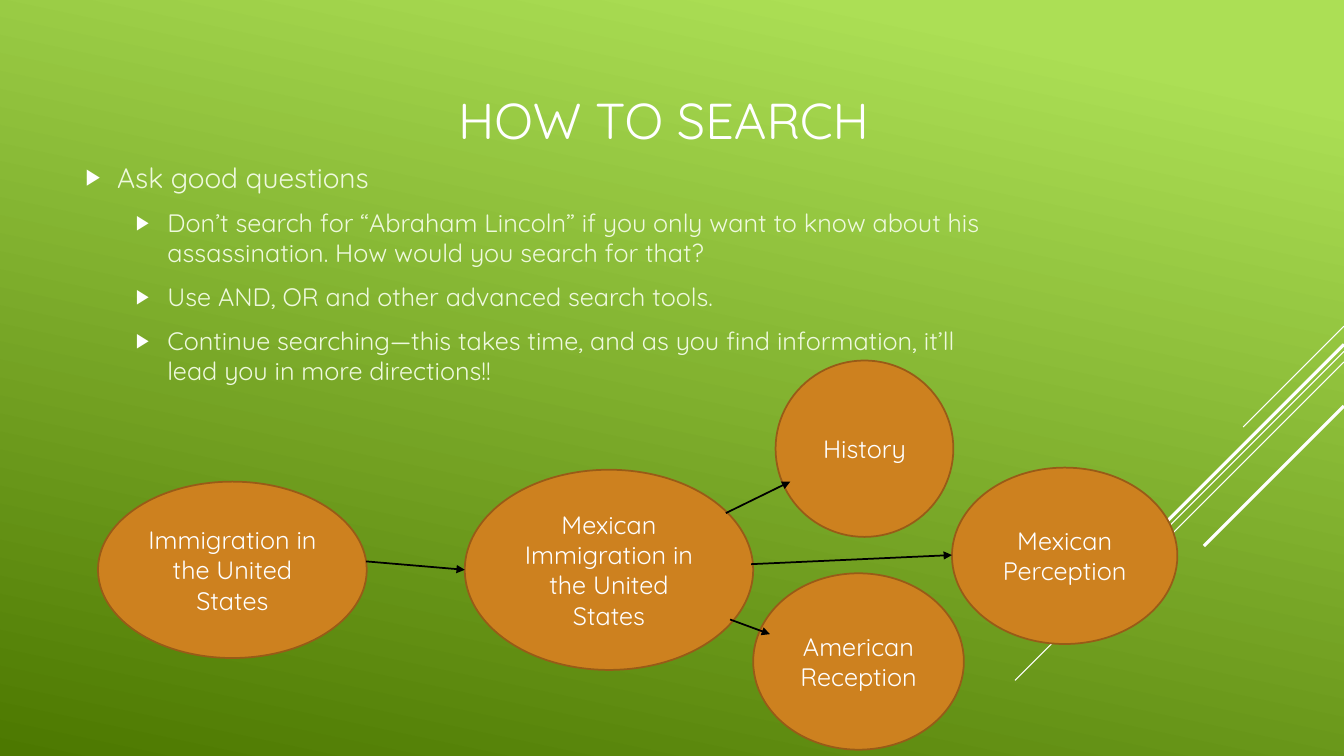
from collections import namedtuple
from dataclasses import dataclass

from lxml import etree
from pptx import Presentation
from pptx.dml.color import RGBColor
from pptx.enum import shapes, text
from pptx.oxml import ns
from pptx.util import Pt

Box = namedtuple("Box", "left top width height")


@dataclass(frozen=True)
class Theme:
    font: str = "Quicksand"
    white: str = "FFFFFF"
    black: str = "000000"
    advice: str = "EEF9DD"
    light_green: str = "ACDF55"
    dark_green: str = "4C7800"
    topic: str = "CD811F"
    topic_edge: str = "985B17"
    title_size: float = 36
    lead_size: float = 20
    detail_size: float = 18
    thin: float = 0.75
    medium: float = 1.25
    thick: float = 2.25


THEME = Theme()

STREAKS = [
    (0, 72, THEME.thin),
    (18, 235, THEME.thin),
    (25.5, 149.5, THEME.thin),
    (13, 137.5, THEME.thick),
    (57, 100, THEME.thick),
]

ADVICE = [
    (0, "Ask good questions"),
    (1, "Don’t search for “Abraham Lincoln” if you only want to know about "
        "his assassination. How would you search for that?"),
    (1, "Use AND, OR and other advanced search tools."),
    (1, "Continue searching—this takes time, and as you find information, "
        "it’ll lead you in more directions!!"),
]

TOPICS = [
    ("Immigration in the United States", Box(0, 86.5, 192, 126)),
    ("History", Box(484, 0, 127, 126)),
    ("Mexican Perception", Box(610, 76.5, 161, 126)),
    ("Mexican Immigration in the United States", Box(262, 78, 206, 143)),
    ("American Reception", Box(468, 152, 150.5, 126)),
]

PATHS = [
    ((191.5, 143.5), (262, 149.5)),
    ((448.5, 109), (494.5, 86.5)),
    ((466.5, 145.5), (610, 139)),
    ((451.5, 185), (480, 195.5)),
]


def rgb(colour):
    return RGBColor.from_string(colour)


def points(box):
    return [Pt(length) for length in box]


def add_words(paragraph, words, size, colour):
    run = paragraph.add_run()
    run.text = words
    run.font.name = THEME.font
    run.font.size = Pt(size)
    run.font.color.rgb = rgb(colour)


def add_line(slide, start, end, colour, weight):
    line = slide.shapes.add_connector(
        shapes.MSO_CONNECTOR.STRAIGHT, *points(start + end))
    line.line.color.rgb = rgb(colour)
    line.line.width = Pt(weight)
    etree.SubElement(line._element.spPr, ns.qn("a:effectLst"))
    return line


def paint_background(slide):
    fill = slide.background.fill
    fill.gradient()
    fill.gradient_angle = 258
    stops = [(0.1, THEME.light_green), (1, THEME.dark_green)]
    for stop, (position, colour) in zip(fill.gradient_stops, stops):
        stop.position = position
        stop.color.rgb = rgb(colour)


def draw_streaks(slide, box):
    right = box.left + box.width
    for offset, reach, weight in STREAKS:
        top = box.top + offset
        add_line(slide, (right, top), (right - reach, top + reach),
                 THEME.white, weight)


def place_title(slide, box):
    title = slide.shapes.title
    title.left, title.top, title.width, title.height = points(box)
    frame = title.text_frame
    frame.vertical_anchor = text.MSO_ANCHOR.MIDDLE
    heading = frame.paragraphs[0]
    heading.alignment = text.PP_ALIGN.CENTER
    add_words(heading, "HOW TO SEARCH", THEME.title_size, THEME.white)


def add_bullet(paragraph, level):
    properties = paragraph._p.get_or_add_pPr()
    properties.set("marL", str(Pt(22.5 + 36 * level)))
    properties.set("indent", str(Pt(-22.5)))
    colour = etree.SubElement(properties, ns.qn("a:buClr"))
    etree.SubElement(colour, ns.qn("a:srgbClr"), val=THEME.white)
    etree.SubElement(properties, ns.qn("a:buSzPct"), val="80000")
    etree.SubElement(properties, ns.qn("a:buFont"), typeface="Arial")
    etree.SubElement(properties, ns.qn("a:buChar"), char="▶")


def write_advice(slide, box):
    frame = slide.shapes.add_textbox(*points(box)).text_frame
    frame.word_wrap = True
    for index, (level, words) in enumerate(ADVICE):
        advice = frame.add_paragraph() if index else frame.paragraphs[0]
        size = THEME.detail_size if level else THEME.lead_size
        advice.level = level
        advice.space_before = Pt(0.2 * size if index else 0)
        advice.space_after = Pt(6)
        add_bullet(advice, level)
        add_words(advice, words, size, THEME.advice)


def draw_topic(slide, box, words):
    topic = slide.shapes.add_shape(shapes.MSO_SHAPE.OVAL, *points(box))
    topic.shadow.inherit = False
    topic.fill.solid()
    topic.fill.fore_color.rgb = rgb(THEME.topic)
    topic.line.color.rgb = rgb(THEME.topic_edge)
    topic.line.width = Pt(THEME.medium)
    frame = topic.text_frame
    frame.word_wrap = True
    frame.vertical_anchor = text.MSO_ANCHOR.MIDDLE
    label = frame.paragraphs[0]
    label.alignment = text.PP_ALIGN.CENTER
    add_words(label, words, THEME.detail_size, THEME.white)


def draw_topic_map(slide, box):
    def shift(point):
        return box.left + point[0], box.top + point[1]

    for words, place in TOPICS:
        left, top = shift(place)
        draw_topic(slide, Box(left, top, place.width, place.height), words)
    for start, end in PATHS:
        arrow = add_line(slide, shift(start), shift(end),
                         THEME.black, THEME.medium)
        etree.SubElement(arrow.line._get_or_add_ln(), ns.qn("a:tailEnd"),
                         type="triangle")


def build_search_slide(deck):
    slide = deck.slides.add_slide(deck.slide_layouts.get_by_name("Title Only"))
    paint_background(slide)
    draw_streaks(slide, Box(725, 233, 235, 253))
    place_title(slide, Box(107, 26, 734, 119))
    write_advice(slide, Box(54, 111, 672, 168))
    draw_topic_map(slide, Box(70, 257.5, 771, 278))


def main():
    deck = Presentation()
    deck.slide_width, deck.slide_height = Pt(960), Pt(540)
    build_search_slide(deck)
    deck.save("out.pptx")


if __name__ == "__main__":
    main()
